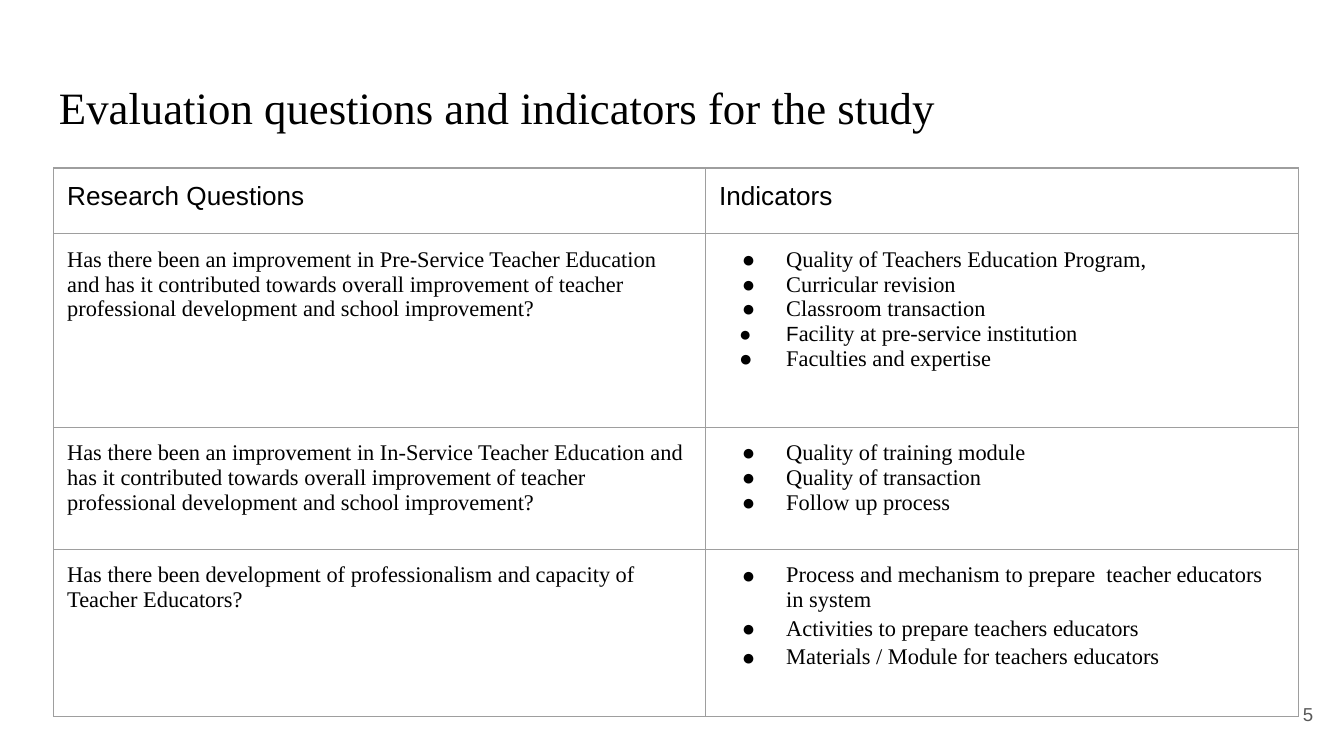
from lxml import etree
from pptx import Presentation
from pptx.dml.color import RGBColor
from pptx.enum.text import MSO_ANCHOR, PP_ALIGN
from pptx.oxml.ns import qn
from pptx.util import Inches, Pt

RIGHT = PP_ALIGN.RIGHT
TOP, MIDDLE = MSO_ANCHOR.TOP, MSO_ANCHOR.MIDDLE
SERIF, SANS = "Times New Roman", "Arial"
COLORS = {"text": "000000", "border": "9E9E9E", "number": "595959"}
SLIDE_WIDTH = 10
SLIDE_HEIGHT = SLIDE_WIDTH * 9 / 16
BORDER_WIDTH = 0.75
PADDING = 0.1

# Content
TITLE = "Evaluation questions and indicators for the study"
PAGE_NUMBER = "5"
HEADINGS = ["Research Questions", "Indicators"]
# Each indicator: text, then any format that differs from the usual
QUESTIONS = [
    ("Has there been an improvement in Pre-Service Teacher Education and has it "
     "contributed towards overall improvement of teacher professional development "
     "and school improvement?",
     [("Quality of Teachers Education Program,", {}),
      ("Curricular revision", {}),
      ("Classroom transaction", {}),
      ("Facility at pre-service institution", {"hanging": 0.35, "sans_initial": True}),
      ("Faculties and expertise", {"hanging": 0.35})]),
    ("Has there been an improvement in In-Service Teacher Education and has it "
     "contributed towards overall improvement of teacher professional development "
     "and school improvement?",
     [("Quality of training module", {}),
      ("Quality of transaction", {}),
      ("Follow up process", {})]),
    ("Has there been development of professionalism and capacity of Teacher Educators?",
     [("Process and mechanism to prepare  teacher educators in system", {}),
      ("Activities to prepare teachers educators", {"spacing": 1.15}),
      ("Materials / Module for teachers educators", {"spacing": 1.15})]),
]
COLUMN_WIDTHS = [4.85, 4.41]
ROW_HEIGHTS = [0.49, 1.44, 0.91, 1.24]


def write(paragraph, text, size=12, font=SERIF, color="text", align=None, spacing=None):
    run = paragraph.add_run()
    run.text = text
    run.font.size = Pt(size)
    run.font.name = font
    run.font.color.rgb = RGBColor.from_string(COLORS[color])
    if align is not None:
        paragraph.alignment = align
    if spacing is not None:
        paragraph.line_spacing = spacing


def add_bullet(paragraph, hanging):
    properties = paragraph._p.get_or_add_pPr()
    properties.set("marL", str(Inches(0.5)))
    properties.set("indent", str(-Inches(hanging)))
    bullet_color = etree.SubElement(properties, qn("a:buClr"))
    etree.SubElement(bullet_color, qn("a:srgbClr"), val=COLORS["text"])
    etree.SubElement(properties, qn("a:buFont"), typeface=SERIF)
    etree.SubElement(properties, qn("a:buChar"), char="●")


def write_indicator(paragraph, text, hanging=0.33, spacing=None, sans_initial=False):
    if sans_initial:
        write(paragraph, text[0], size=11, font=SANS)
        text = text[1:]
    write(paragraph, text, spacing=spacing)
    add_bullet(paragraph, hanging)


def pad(area):
    area.margin_left = area.margin_right = Inches(PADDING)
    area.margin_top = area.margin_bottom = Inches(PADDING)


def style_cell(cell):
    pad(cell)
    cell.fill.background()
    properties = cell._tc.get_or_add_tcPr()
    for position, side in enumerate(("lnL", "lnR", "lnT", "lnB")):
        line = etree.Element(qn(f"a:{side}"), w=str(Pt(BORDER_WIDTH)))
        fill = etree.SubElement(line, qn("a:solidFill"))
        etree.SubElement(fill, qn("a:srgbClr"), val=COLORS["border"])
        properties.insert(position, line)


def add_label(slide, box, text, anchor=TOP, **text_format):
    frame = slide.shapes.add_textbox(*map(Inches, box)).text_frame
    frame.word_wrap = True
    frame.vertical_anchor = anchor
    pad(frame)
    write(frame.paragraphs[0], text, **text_format)


def add_question_table(slide):
    table = slide.shapes.add_table(
        len(ROW_HEIGHTS), len(COLUMN_WIDTHS), Inches(0.4), Inches(1.25),
        Inches(sum(COLUMN_WIDTHS)), Inches(sum(ROW_HEIGHTS))).table
    table.first_row = table.horz_banding = False
    for column, width in zip(table.columns, COLUMN_WIDTHS):
        column.width = Inches(width)
    for row, height in zip(table.rows, ROW_HEIGHTS):
        row.height = Inches(height)
    for cell in table.iter_cells():
        style_cell(cell)

    # Heading row
    for column, heading in enumerate(HEADINGS):
        write(table.cell(0, column).text_frame.paragraphs[0], heading, size=14, font=SANS)

    # One row per question, with its bulleted indicators
    for row, (question, indicators) in enumerate(QUESTIONS, start=1):
        write(table.cell(row, 0).text_frame.paragraphs[0], question)
        frame = table.cell(row, 1).text_frame
        for index, (indicator, indicator_format) in enumerate(indicators):
            paragraph = frame.add_paragraph() if index else frame.paragraphs[0]
            write_indicator(paragraph, indicator, **indicator_format)


def main():
    presentation = Presentation()
    presentation.slide_width = Inches(SLIDE_WIDTH)
    presentation.slide_height = Inches(SLIDE_HEIGHT)
    slide = presentation.slides.add_slide(presentation.slide_layouts[6])
    add_label(slide, (0.34, 0.49, 9.32, 0.63), TITLE, size=24)
    add_question_table(slide)
    add_label(slide, (9.27, 5.1, 0.6, 0.43), PAGE_NUMBER, anchor=MIDDLE,
              size=10, font=SANS, color="number", align=RIGHT)
    presentation.save("out.pptx")


if __name__ == "__main__":
    main()
